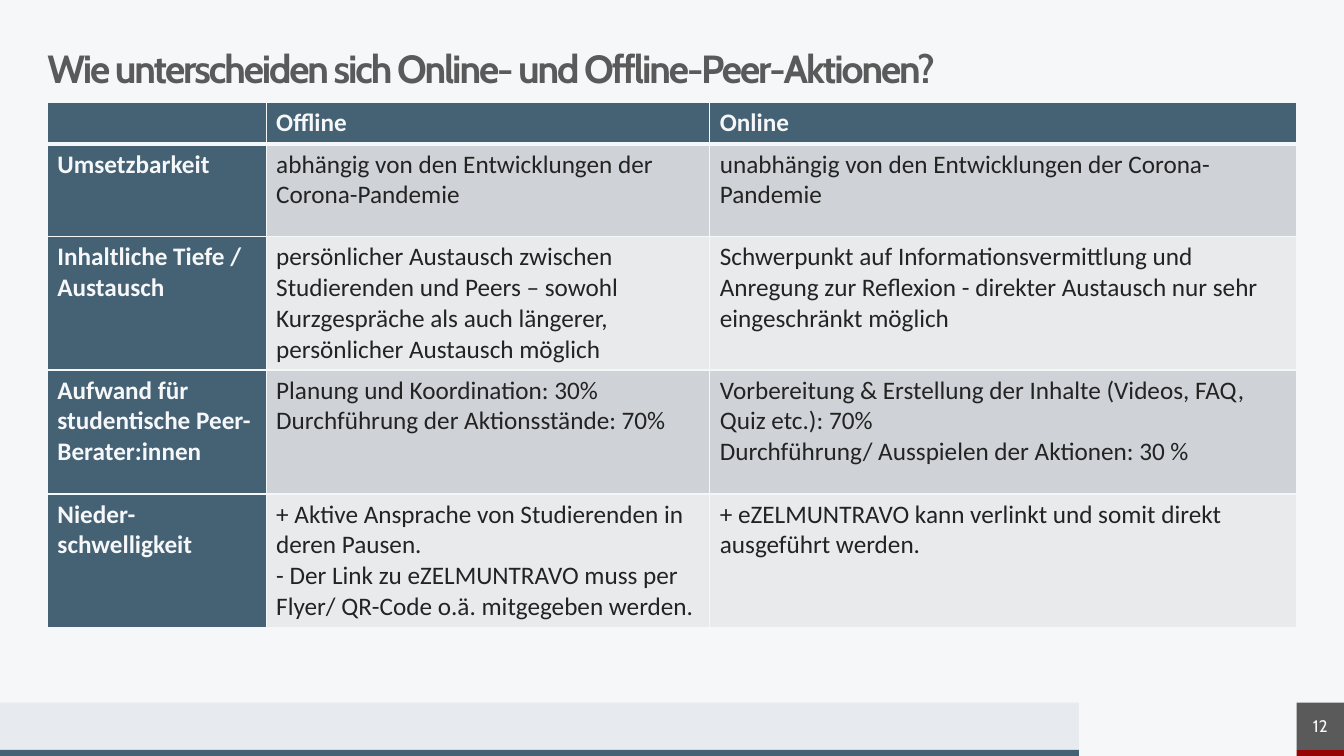
from dataclasses import dataclass

from lxml.etree import SubElement
from pptx import Presentation
from pptx.dml.color import RGBColor
from pptx.enum.shapes import MSO_SHAPE
from pptx.enum.text import MSO_ANCHOR, MSO_AUTO_SIZE, PP_ALIGN
from pptx.oxml.ns import qn
from pptx.shapes.autoshape import Shape
from pptx.slide import Slide
from pptx.table import _Cell
from pptx.text.text import TextFrame
from pptx.util import Inches, Pt

PAPER = RGBColor(0xF6, 0xF7, 0xF9)
MIST = RGBColor(0xE7, 0xEA, 0xEF)
PETROL = RGBColor(0x45, 0x61, 0x74)
RED = RGBColor(0x95, 0x05, 0x05)
GREY = RGBColor(0x5A, 0x5A, 0x5A)
INK = RGBColor(0x23, 0x23, 0x23)
BAND_DARK = RGBColor(0xCF, 0xD2, 0xD6)
BAND_LIGHT = RGBColor(0xE9, 0xEA, 0xEB)

MARGIN = 0.47
CONTENT_WIDTH = 12.39
COLUMN_WIDTHS = (2.17, 4.4, 5.82)
HEADER_HEIGHT = 0.41


@dataclass(frozen=True)
class Bar:
    left: float
    top: float
    width: float
    height: float
    color: RGBColor


@dataclass(frozen=True)
class Comparison:
    aspect: str
    offline: str
    online: str
    height: float


FOOTER_BARS = (
    Bar(0, 6.97, 10.7, 0.47, MIST),
    Bar(0, 7.44, 10.7, 0.06, PETROL),
    Bar(12.86, 7.44, 0.47, 0.06, RED),
)
PAGE_BAR = Bar(12.86, 6.97, 0.47, 0.47, GREY)

COMPARISONS = (
    Comparison("", "Offline", "Online", HEADER_HEIGHT),
    Comparison(
        "Umsetzbarkeit",
        "abhängig von den Entwicklungen der Corona-Pandemie",
        "unabhängig von den Entwicklungen der Corona-Pandemie",
        0.92,
    ),
    Comparison(
        "Inhaltliche Tiefe / Austausch",
        "persönlicher Austausch zwischen Studierenden und Peers – sowohl "
        "Kurzgespräche als auch längerer, persönlicher Austausch möglich",
        "Schwerpunkt auf Informationsvermittlung und Anregung zur Reflexion - "
        "direkter Austausch nur sehr eingeschränkt möglich",
        1.32,
    ),
    Comparison(
        "Aufwand für studentische Peer-Berater:innen",
        "Planung und Koordination: 30%\nDurchführung der Aktionsstände: 70%",
        "Vorbereitung & Erstellung der Inhalte (Videos, FAQ, Quiz etc.): 70%\n"
        "Durchführung/ Ausspielen der Aktionen: 30 %",
        1.23,
    ),
    Comparison(
        "Nieder-schwelligkeit",
        "+ Aktive Ansprache von Studierenden in deren Pausen.\n"
        "- Der Link zu eZELMUNTRAVO muss per Flyer/ QR-Code o.ä. "
        "mitgegeben werden.",
        "+ eZELMUNTRAVO kann verlinkt und somit direkt ausgeführt werden.",
        1.32,
    ),
)


def write_text(frame: TextFrame, text: str, *, size: float, color: RGBColor,
               font: str = "Calibri", bold: bool = False,
               align: PP_ALIGN = PP_ALIGN.LEFT, line_spacing: float = 1.0,
               tracking: float = 0) -> None:
    """Fill a frame with one paragraph per line of text."""
    frame.text = text
    for paragraph in frame.paragraphs:
        paragraph.alignment = align
        paragraph.line_spacing = line_spacing
        for run in paragraph.runs:
            run.font.name = font
            run.font.size = Pt(size)
            run.font.bold = bold
            run.font.color.rgb = color
            if tracking:
                run.font._element.set("spc", str(round(tracking * 100)))


def fit_frame(frame: TextFrame) -> None:
    """Remove the insets and centre the text vertically."""
    frame.margin_left = frame.margin_right = 0
    frame.margin_top = frame.margin_bottom = 0
    frame.vertical_anchor = MSO_ANCHOR.MIDDLE
    frame.auto_size = MSO_AUTO_SIZE.NONE
    frame.word_wrap = True


def add_bar(slide: Slide, bar: Bar) -> Shape:
    shape = slide.shapes.add_shape(
        MSO_SHAPE.RECTANGLE, Inches(bar.left), Inches(bar.top),
        Inches(bar.width), Inches(bar.height))
    shape.shadow.inherit = False
    shape.fill.solid()
    shape.fill.fore_color.rgb = bar.color
    shape.line.fill.background()
    return shape


def set_borders(cell: _Cell, top: float, bottom: float) -> None:
    """Draw the cell borders; call before setting the cell fill."""
    properties = cell._tc.get_or_add_tcPr()
    for side, width in (("L", 1), ("R", 1), ("T", top), ("B", bottom)):
        line = SubElement(properties, qn(f"a:ln{side}"), w=str(Pt(width)))
        fill = SubElement(line, qn("a:solidFill"))
        SubElement(fill, qn("a:srgbClr"), val=str(PAPER))


def add_comparison_table(slide: Slide) -> None:
    total_height = sum(row.height for row in COMPARISONS)
    table = slide.shapes.add_table(
        len(COMPARISONS), len(COLUMN_WIDTHS), Inches(MARGIN), Inches(1.02),
        Inches(CONTENT_WIDTH), Inches(total_height)).table
    table.horz_banding = False
    table.first_col = True
    for column, width in zip(table.columns, COLUMN_WIDTHS):
        column.width = Inches(width)

    for r, row in enumerate(COMPARISONS):
        table.rows[r].height = Inches(row.height)
        band = BAND_DARK if r % 2 else BAND_LIGHT
        for c, text in enumerate((row.aspect, row.offline, row.online)):
            cell = table.cell(r, c)
            heading = r == 0 or c == 0
            set_borders(cell, top=3 if r == 1 else 1, bottom=3 if r == 0 else 1)
            cell.fill.solid()
            cell.fill.fore_color.rgb = PETROL if heading else band
            write_text(cell.text_frame, text, size=18, bold=heading,
                       color=PAPER if heading else INK)


def main() -> None:
    deck = Presentation()
    deck.slide_width, deck.slide_height = Inches(13.33), Inches(7.5)
    slide = deck.slides.add_slide(deck.slide_layouts[5])
    slide.background.fill.solid()
    slide.background.fill.fore_color.rgb = PAPER

    # Footer
    for bar in FOOTER_BARS:
        add_bar(slide, bar)
    page_number = add_bar(slide, PAGE_BAR).text_frame
    fit_frame(page_number)
    write_text(page_number, "12", size=12, font="Cabin", color=PAPER,
               align=PP_ALIGN.CENTER)

    # Title
    title = slide.shapes.title
    title.left, title.top = Inches(MARGIN), Inches(0.47)
    title.width, title.height = Inches(CONTENT_WIDTH), Inches(0.47)
    fit_frame(title.text_frame)
    write_text(title.text_frame,
               "Wie unterscheiden sich Online- und Offline-Peer-Aktionen?",
               size=28, font="Cabin", color=GREY, bold=True,
               line_spacing=0.9, tracking=-1.5)

    # Comparison
    add_comparison_table(slide)
    deck.save("out.pptx")


if __name__ == "__main__":
    main()
